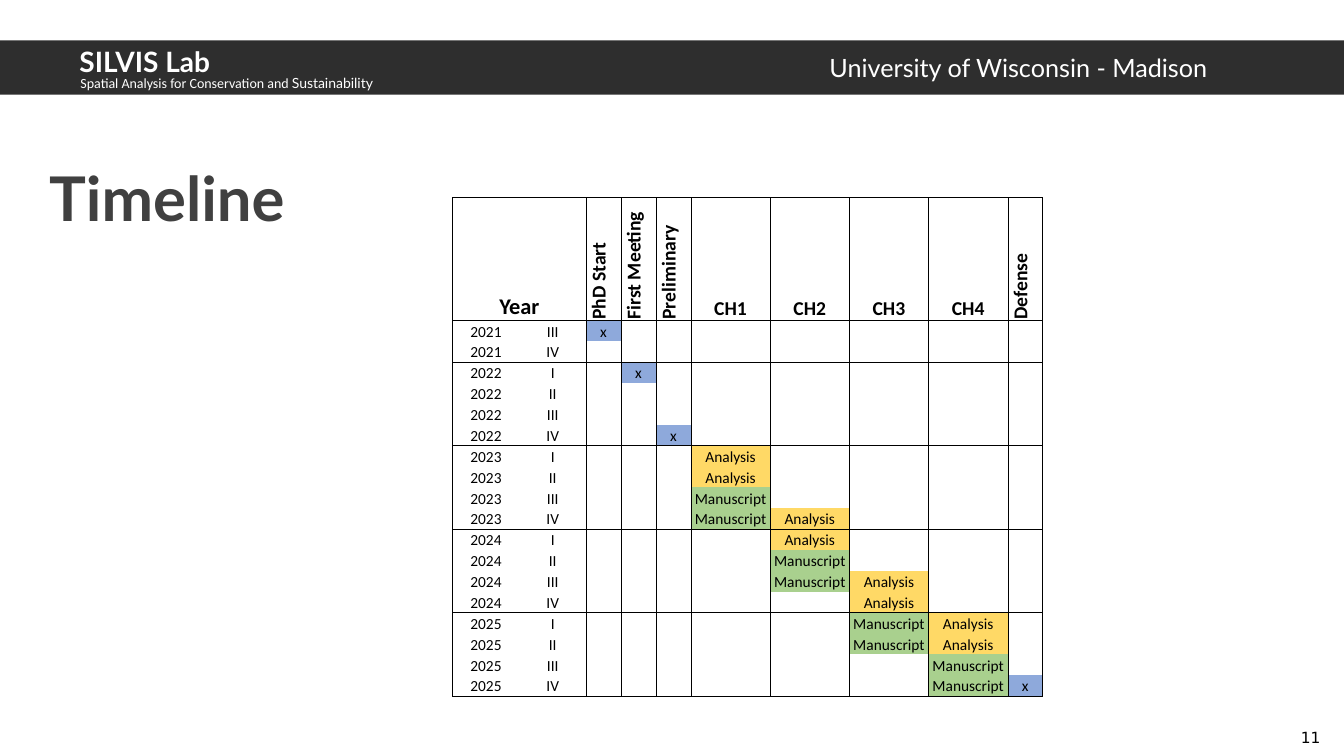
from typing import NamedTuple

from lxml import etree
from pptx import Presentation
from pptx import util as u
from pptx.dml.color import RGBColor
from pptx.enum import shapes, text
from pptx.oxml.ns import qn

BLACK = RGBColor(0x00, 0x00, 0x00)
WHITE = RGBColor(0xFF, 0xFF, 0xFF)
DARK = RGBColor(0x2E, 0x2E, 0x2E)
GREY = RGBColor(0x40, 0x40, 0x40)
BLUE = RGBColor(0x8E, 0xA9, 0xDB)
GOLD = RGBColor(0xFF, 0xD9, 0x66)
GREEN = RGBColor(0xA9, 0xD0, 0x8E)

MIDDLE, RIGHT = text.PP_ALIGN.CENTER, text.PP_ALIGN.RIGHT
FILLS = {"x": BLUE, "Analysis": GOLD, "Manuscript": GREEN}
CHAPTER = ["Analysis"] * 2 + ["Manuscript"] * 2
QUARTERS = ["I", "II", "III", "IV"]
ROWS = 18
SKIP = 2  # quarters of 2021 before the plan starts
HEAD_TALL, ROW_TALL = 87.8, 14.92
YEAR_WIDE = 47.7


class Run(NamedTuple):
    words: str
    size: float
    font: str = "Lato"
    color: RGBColor = WHITE
    bold: bool = False


class Label(NamedTuple):
    left: float
    top: float
    width: float
    height: float
    runs: list[Run]
    align: text.PP_ALIGN = text.PP_ALIGN.LEFT
    anchor: text.MSO_ANCHOR = text.MSO_ANCHOR.TOP


class Stage(NamedTuple):
    """A table column whose tasks fill the rows from start onward."""
    head: str
    start: int
    tasks: list[str]
    width: float = 25
    turned: bool = True


LABELS = [
    Label(882.7, 516.2, 67.7, 20.9, [Run("11", 11, "DejaVu Sans", BLACK)], RIGHT),
    Label(50.4, 49.7, 426.2, 12.2, [
        Run("Spatial Analysis for Conservation and ", 10, "Calibri"),
        Run("Sustainability", 10)]),
    Label(49.7, 28.1, 200.2, 31.7, [Run("SILVIS Lab", 20, bold=True)]),
    Label(585.4, 33.8, 323.3, 28.8, [Run("University of Wisconsin - Madison", 18)]),
    Label(28.1, 98.6, 864.7, 84.2, [Run("Timeline", 44, color=GREY, bold=True)],
          anchor=text.MSO_ANCHOR.MIDDLE),
]

STAGES = [
    Stage("PhD Start", 0, ["x"]),
    Stage("First Meeting", 2, ["x"]),
    Stage("Preliminary", 5, ["x"]),
    *(Stage(f"CH{n}", start, CHAPTER, 56.6, False)
      for n, start in enumerate([6, 9, 12, 14], 1)),
    Stage("Defense", 17, ["x"]),
]


def assign(thing: object, values: dict) -> None:
    for name, value in values.items():
        setattr(thing, name, value)


def write(par, run: Run) -> None:
    part = par.add_run()
    part.text = run.words
    assign(part.font, {"size": u.Pt(run.size), "name": run.font, "bold": run.bold})
    part.font.color.rgb = run.color


def add_block(slide, box: tuple, fill: RGBColor, edge: float = 0) -> None:
    block = slide.shapes.add_shape(shapes.MSO_SHAPE.RECTANGLE, *map(u.Pt, box))
    block.shadow.inherit = False
    block.fill.solid()
    block.fill.fore_color.rgb = fill
    if edge:
        block.line.color.rgb = fill
        block.line.width = u.Pt(edge)
    else:
        block.line.fill.background()


def add_label(slide, label: Label) -> None:
    frame = slide.shapes.add_textbox(*map(u.Pt, label[:4])).text_frame
    assign(frame, {"word_wrap": True, "vertical_anchor": label.anchor})
    par = frame.paragraphs[0]
    par.alignment = label.align
    for run in label.runs:
        write(par, run)


def set_lines(cell, sides: str) -> None:
    """Rule the given sides of a cell, and clear the others."""
    props = cell._tc.get_or_add_tcPr()
    for side in "LRTB":
        line = etree.SubElement(props, qn(f"a:ln{side}"), w=str(u.Pt(0.5)))
        if side in sides:
            fill = etree.SubElement(line, qn("a:solidFill"))
            etree.SubElement(fill, qn("a:srgbClr"), val=str(BLACK))
        else:
            etree.SubElement(line, qn("a:noFill"))


def fill_cell(cell, words: str, sides: str, size: float = 11,
              bold: bool = False, turned: bool = False) -> None:
    edge = u.Pt(0.7)
    assign(cell, {"margin_left": edge, "margin_right": edge, "margin_top": edge,
                  "margin_bottom": u.Pt(0),
                  "vertical_anchor": text.MSO_ANCHOR.BOTTOM})
    set_lines(cell, sides)
    if words in FILLS:
        cell.fill.solid()
        cell.fill.fore_color.rgb = FILLS[words]
    else:
        cell.fill.background()
    par = cell.text_frame.paragraphs[0]
    if turned:
        cell._tc.get_or_add_tcPr().set("vert", "vert270")
    else:
        par.alignment = MIDDLE
    if words:
        write(par, Run(words, size, "Calibri", BLACK, bold))
    else:
        etree.SubElement(par._p, qn("a:endParaRPr"), sz=str(size * 100))


def add_plan(slide) -> None:
    widths = [YEAR_WIDE] * 2 + [stage.width for stage in STAGES]
    talls = [HEAD_TALL] + [ROW_TALL] * ROWS
    box = 323.3, 141.1, sum(widths), sum(talls)
    grid = slide.shapes.add_table(len(talls), len(widths), *map(u.Pt, box)).table
    assign(grid, {"first_row": False, "horz_banding": False})
    for column, width in zip(grid.columns, widths):
        column.width = u.Pt(width)
    for row, tall in zip(grid.rows, talls):
        row.height = u.Pt(tall)

    grid.cell(0, 0).merge(grid.cell(0, 1))
    fill_cell(grid.cell(0, 0), "Year", "LRTB", 16, True)
    fill_cell(grid.cell(0, 1), "", "LRTB")
    for col, stage in enumerate(STAGES, 2):
        fill_cell(grid.cell(0, col), stage.head, "LRTB", 14, True, stage.turned)

    for row in range(ROWS):
        year, part = divmod(row + SKIP, 4)
        ends = "T" * (part == 0 or row == 0) + "B" * (part == 3)
        fill_cell(grid.cell(row + 1, 0), str(2021 + year), "L" + ends)
        fill_cell(grid.cell(row + 1, 1), QUARTERS[part], "R" + ends)
        for col, stage in enumerate(STAGES, 2):
            step = row - stage.start
            task = stage.tasks[step] if 0 <= step < len(stage.tasks) else ""
            fill_cell(grid.cell(row + 1, col), task, "LR" + ends)


def main() -> None:
    deck = Presentation()
    assign(deck, {"slide_width": u.Pt(960), "slide_height": u.Pt(540)})
    slide = deck.slides.add_slide(deck.slide_layouts[6])
    slide.background.fill.solid()
    slide.background.fill.fore_color.rgb = BLACK
    add_block(slide, (0, 0, 959, 540), WHITE, 2)
    add_block(slide, (0, 28.8, 960, 38.9), DARK)
    for label in LABELS:
        add_label(slide, label)
    add_plan(slide)
    deck.save("out.pptx")


if __name__ == "__main__":
    main()
